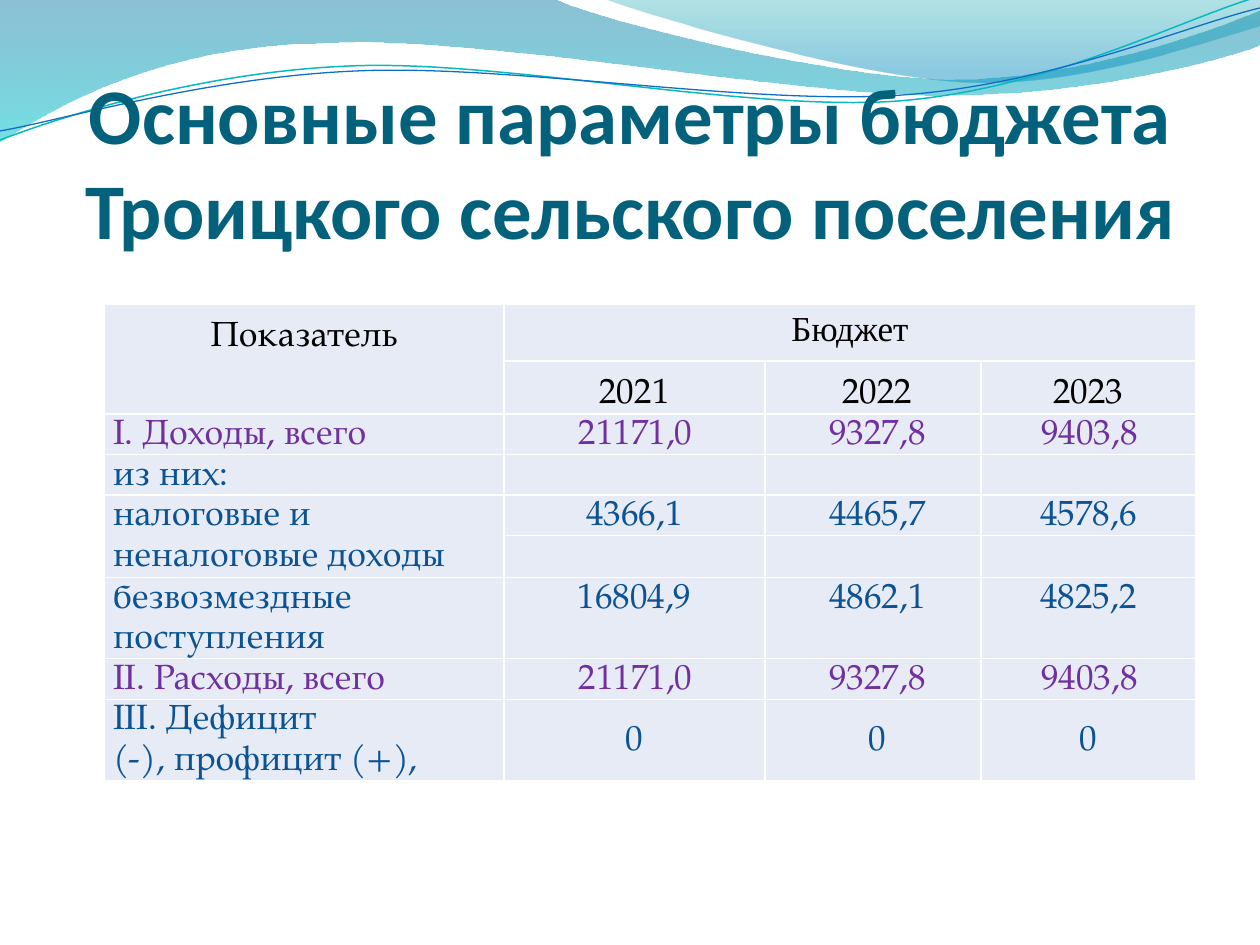
from lxml import etree
from pptx import Presentation
from pptx.dml.color import RGBColor
from pptx.enum.text import MSO_ANCHOR, MSO_AUTO_SIZE, PP_ALIGN
from pptx.oxml.ns import qn
from pptx.util import Pt

PX = 914400 / 126
TOP, MIDDLE, BOTTOM = MSO_ANCHOR.TOP, MSO_ANCHOR.MIDDLE, MSO_ANCHOR.BOTTOM
LEFT, CENTER = PP_ALIGN.LEFT, PP_ALIGN.CENTER

BLACK = RGBColor(0x00, 0x00, 0x00)
TITLE_TEAL = RGBColor(0x04, 0x61, 0x7B)
PURPLE = RGBColor(0x70, 0x30, 0xA0)
BLUE = RGBColor(0x0B, 0x53, 0x94)
CELL_FILL = RGBColor(0xE7, 0xEB, 0xF5)
SERIF = "TeX Gyre Pagella"

TITLE = "Основные параметры бюджета Троицкого сельского поселения"
YEARS = ["2021", "2022", "2023"]
YEAR_INDENTS = [0, 9, 0]
TOTAL_INDENTS = [2, 9, 2]
# label lines, values by year, colour, label anchor, value anchor, value indents
BUDGET = [
    (["I. Доходы, всего"], ["21171,0", "9327,8", "9403,8"],
     PURPLE, MIDDLE, TOP, TOTAL_INDENTS),
    (["из них:"], [], BLUE, MIDDLE, TOP, YEAR_INDENTS),
    (["налоговые и неналоговые доходы"], ["4366,1", "4465,7", "4578,6"],
     BLUE, TOP, TOP, YEAR_INDENTS),
    ([], [], BLUE, TOP, TOP, YEAR_INDENTS),
    (["безвозмездные поступления"], ["16804,9", "4862,1", "4825,2"],
     BLUE, TOP, TOP, YEAR_INDENTS),
    (["II. Расходы, всего"], ["21171,0", "9327,8", "9403,8"],
     PURPLE, MIDDLE, TOP, TOTAL_INDENTS),
    (["III. Дефицит", "(-), профицит (+),"], ["0", "0", "0"],
     BLUE, TOP, MIDDLE, YEAR_INDENTS),
]
COLUMN_WIDTHS = [400, 261, 216, 215]
ROW_HEIGHTS = [57, 48, 39, 39, 39, 42, 81, 39, 81]

# Each step has one point for a straight line, three for a Bezier curve.
# Gradient stops: position, colour, opacity in percent.
WAVE_BANDS = [
    ([[(0, 0)], [(554, -1)], [(600, 21), (837, 79), (955, 79)],
      [(1075, 79), (1207, 33), (1260, 11)], [(1261, 45)],
      [(1239, 55), (1096, 96), (940, 95)], [(783, 95), (481, 35), (324, 43)],
      [(163, 45), (58, 105), (-1, 142)]],
     [(0, RGBColor(0x00, 0x74, 0xA1), 45), (1, RGBColor(0x00, 0xC6, 0xCF), 55)]),
    ([[(604, -1)], [(641, 14), (859, 78), (969, 82)],
      [(1079, 87), (1211, 40), (1260, 26)], [(1260, 0)]],
     [(0, RGBColor(0x00, 0xA1, 0xA9), 30), (0.8, RGBColor(0x00, 0x8B, 0xBF), 45)]),
]
WAVE_LINES = [
    ([[(0, 140)], [(60, 117), (199, 72), (349, 66)],
      [(498, 59), (747, 112), (898, 101)], [(1050, 89), (1182, 19), (1257, -3)]],
     RGBColor(0x0A, 0xB8, 0xBF), 0.85),
    ([[(0, 131)], [(59, 121), (207, 77), (357, 71)],
      [(508, 64), (752, 106), (903, 95)], [(1053, 84), (1185, 26), (1260, 8)]],
     RGBColor(0x0F, 0x6F, 0xC6), 0.75),
]


def px(value):
    return round(value * PX)


def add_wave(shapes, steps, close):
    """Add a freeform, then join each three-point step into one Bezier curve."""
    start, *others = [(px(x), px(y)) for step in steps for x, y in step]
    builder = shapes.build_freeform(*start)
    builder.add_line_segments(others, close=close)
    wave = builder.convert_to_shape()
    wave.shadow.inherit = False
    segments = iter(list(wave._element.iter(qn("a:lnTo"))))
    for step in steps[1:]:
        group = [next(segments) for _ in step]
        if len(group) == 3:
            curve = etree.Element(qn("a:cubicBezTo"))
            group[0].addprevious(curve)
            for segment in group:
                curve.append(segment[0])
                segment.getparent().remove(segment)
    return wave


def add_waves(shapes):
    for steps, stops in WAVE_BANDS:
        band = add_wave(shapes, steps, True)
        band.line.fill.background()
        band.fill.gradient()
        band.fill.gradient_angle = 270
        for stop, (position, color, _) in zip(band.fill.gradient_stops, stops):
            stop.position = position
            stop.color.rgb = color
        colors = band._element.iter(qn("a:srgbClr"))
        for color, (_, _, opacity) in zip(colors, stops):
            etree.SubElement(color, qn("a:alpha"), val=str(opacity * 1000))
    for steps, color, width in WAVE_LINES:
        curve = add_wave(shapes, steps, False)
        curve.fill.background()
        curve.line.color.rgb = color
        curve.line.width = Pt(width)


def add_run(paragraph, text, font, size, color, bold=False):
    run = paragraph.add_run()
    run.text = text
    run.font.name, run.font.size, run.font.bold = font, Pt(size), bold
    run.font.color.rgb = color


def write_cell(cell, lines, color, align=CENTER, anchor=TOP, spacing=1.15,
               font=SERIF, indent=0):
    cell.vertical_anchor = anchor
    frame = cell.text_frame
    for i, line in enumerate(lines):
        paragraph = frame.add_paragraph() if i else frame.paragraphs[0]
        paragraph.alignment = align
        paragraph.line_spacing = spacing
        if indent:
            paragraph._p.get_or_add_pPr().set("indent", str(px(indent)))
        add_run(paragraph, line, font, 20, color)


def add_budget_table(shapes):
    table = shapes.add_table(len(ROW_HEIGHTS), len(COLUMN_WIDTHS), px(104), px(304),
                             px(sum(COLUMN_WIDTHS)), px(sum(ROW_HEIGHTS))).table
    table.first_row = table.horz_banding = False
    for column, width in zip(table.columns, COLUMN_WIDTHS):
        column.width = px(width)
    for row, height in zip(table.rows, ROW_HEIGHTS):
        row.height = px(height)
    for cell in table.iter_cells():
        cell.fill.solid()
        cell.fill.fore_color.rgb = CELL_FILL
        cell.margin_left = cell.margin_right = px(9)
        cell.margin_top = cell.margin_bottom = 0
    for first, last in [((0, 0), (1, 0)), ((0, 1), (0, 3)), ((4, 0), (5, 0))]:
        table.cell(*first).merge(table.cell(*last))

    write_cell(table.cell(0, 0), ["Показатель"], BLACK, spacing=1.5)
    write_cell(table.cell(0, 1), ["Бюджет"], BLACK, font="Times New Roman")
    for c, (year, indent) in enumerate(zip(YEARS, YEAR_INDENTS), 1):
        write_cell(table.cell(1, c), [year], BLACK, spacing=1.5, indent=indent)
    for r, (label, values, color, label_anchor, value_anchor, indents) in enumerate(BUDGET, 2):
        write_cell(table.cell(r, 0), label, color, LEFT, label_anchor)
        for c, (value, indent) in enumerate(zip(values, indents), 1):
            write_cell(table.cell(r, c), [value], color, anchor=value_anchor, indent=indent)


def format_title(title):
    title.left, title.top, title.width, title.height = map(px, (63, 97, 1134, 158))
    frame = title.text_frame
    frame.word_wrap = True
    frame.auto_size = MSO_AUTO_SIZE.NONE
    frame.vertical_anchor = BOTTOM
    frame.margin_left = frame.margin_right = frame.margin_bottom = 0
    frame.margin_top = px(6)
    frame.paragraphs[0].alignment = CENTER
    add_run(frame.paragraphs[0], TITLE, "Calibri", 45, TITLE_TEAL, bold=True)


def main():
    deck = Presentation()
    deck.slide_width, deck.slide_height = px(1260), px(945)
    slide = deck.slides.add_slide(deck.slide_layouts[5])
    title = slide.shapes.title
    add_waves(slide.shapes)
    format_title(title)
    slide.shapes._spTree.append(title._element)  # bring the title in front of the waves
    add_budget_table(slide.shapes)
    deck.save("out.pptx")


if __name__ == "__main__":
    main()
